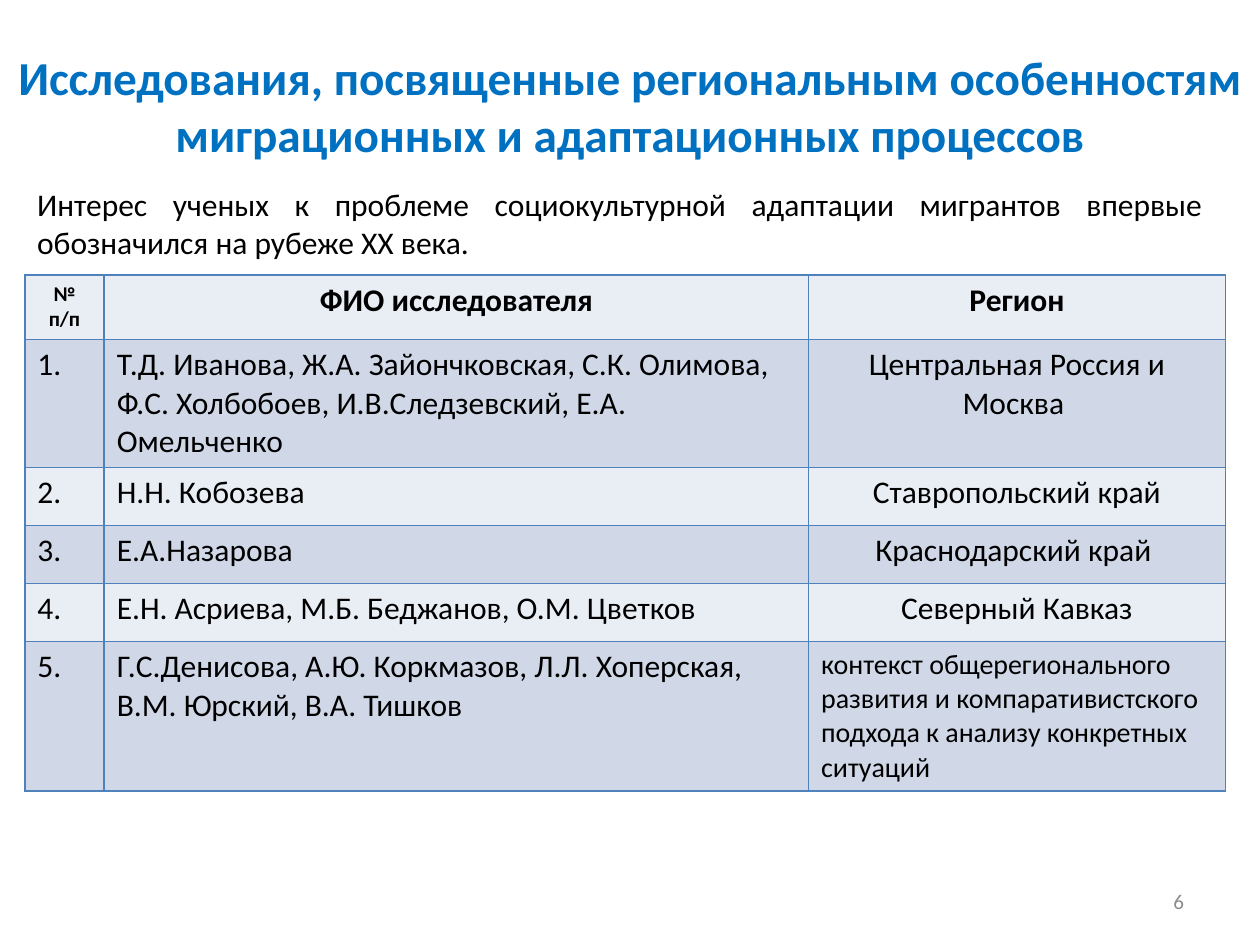
from dataclasses import dataclass

from lxml import etree
from pptx import Presentation
from pptx.dml.color import RGBColor
from pptx.enum import text
from pptx.oxml import ns
from pptx.util import Cm, Pt

BLUE = RGBColor(0x00, 0x70, 0xC0)
BORDER = RGBColor(0x4F, 0x81, 0xBD)
BLACK = RGBColor(0, 0, 0)
GREY = RGBColor(0x8C, 0x8C, 0x8C)
BANDS = (RGBColor(0xE9, 0xED, 0xF4), RGBColor(0xD0, 0xD8, 0xE8))
LEFT, CENTER = text.PP_ALIGN.LEFT, text.PP_ALIGN.CENTER
RIGHT, JUSTIFY = text.PP_ALIGN.RIGHT, text.PP_ALIGN.JUSTIFY
MIDDLE, TOP = text.MSO_ANCHOR.MIDDLE, text.MSO_ANCHOR.TOP


@dataclass
class Style:
    size: float = 18
    align: int = LEFT
    bold: bool = False
    color: RGBColor = BLACK


@dataclass
class Entry:
    """One table cell; each line of content is a paragraph."""
    content: str
    style: Style


@dataclass
class Row:
    height: float
    entries: tuple[Entry, ...]


PLAIN = Style()
REGION = Style(align=CENTER)
HEAD = Style(align=CENTER, bold=True)
COLUMNS = (1.6, 14.2, 8.4)


def research(number: int, height: float, names: str, region: str,
             style: Style = REGION) -> Row:
    return Row(height, (Entry(f"{number}.", PLAIN), Entry(names, PLAIN),
                        Entry(region, style)))


ROWS = (
    Row(1.3, (Entry("№\nп/п", Style(12, CENTER, True)),
              Entry("ФИО исследователя", HEAD), Entry("Регион", HEAD))),
    research(1, 2.58, "Т.Д. Иванова, Ж.А. Зайончковская, С.К. Олимова,\n"
             "Ф.С. Холбобоев, И.В.Следзевский, Е.А. Омельченко",
             "Центральная Россия и Москва "),
    research(2, 1.17, "Н.Н. Кобозева", "Ставропольский край"),
    research(3, 1.17, "Е.А.Назарова", "Краснодарский край "),
    research(4, 1.17, "Е.Н. Асриева, М.Б. Беджанов, О.М. Цветков", "Северный Кавказ"),
    research(5, 3.02, "Г.С.Денисова, А.Ю. Коркмазов, Л.Л. Хоперская, "
             "В.М. Юрский, В.А. Тишков",
             "контекст общерегионального\nразвития и компаративистского "
             "подхода к анализу конкретных ситуаций", Style(16)),
)


def write(tf, content: str, style: Style) -> None:
    tf.text = content
    tf.word_wrap = True
    font = {"name": "Calibri", "size": Pt(style.size), "bold": style.bold}
    for p in tf.paragraphs:
        p.alignment = style.align
        for r in p.runs:
            for name, value in font.items():
                setattr(r.font, name, value)
            r.font.color.rgb = style.color


def add_text(slide, box: tuple[float, ...], content: str, style: Style, anchor) -> None:
    tf = slide.shapes.add_textbox(*map(Cm, box)).text_frame
    write(tf, content, style)
    tf.vertical_anchor = anchor


def add_borders(cell) -> None:
    """Line all four sides; the lines must precede the fill in the XML."""
    pr = cell._tc.get_or_add_tcPr()
    for i, side in enumerate(("lnL", "lnR", "lnT", "lnB")):
        ln = etree.Element(ns.qn(f"a:{side}"), w=str(Pt(1)))
        fill = etree.SubElement(ln, ns.qn("a:solidFill"))
        etree.SubElement(fill, ns.qn("a:srgbClr"), val=str(BORDER))
        pr.insert(i, ln)


def add_research_table(slide) -> None:
    box = (0.5, 5.54, sum(COLUMNS), sum(row.height for row in ROWS))
    table = slide.shapes.add_table(len(ROWS), len(COLUMNS), *map(Cm, box)).table
    for column, width in zip(table.columns, COLUMNS):
        column.width = Cm(width)
    for i, row in enumerate(ROWS):
        table.rows[i].height = Cm(row.height)
        for j, entry in enumerate(row.entries):
            cell = table.cell(i, j)
            write(cell.text_frame, entry.content, entry.style)
            cell.fill.solid()
            cell.fill.fore_color.rgb = BANDS[i % 2]
            add_borders(cell)


def main() -> None:
    prs = Presentation()
    prs.slide_width, prs.slide_height = Cm(25.4), Cm(19.05)
    slide = prs.slides.add_slide(prs.slide_layouts[5])

    title = slide.shapes.title
    title.left, title.top, title.width, title.height = map(Cm, (0, 0.53, 25.4, 3.18))
    write(title.text_frame, "Исследования, посвященные региональным особенностям\v"
          "миграционных и адаптационных процессов", Style(27, CENTER, True, BLUE))
    title.text_frame.vertical_anchor = MIDDLE

    add_text(slide, (18.2, 17.65, 5.92, 1.02), "6", Style(12, RIGHT, color=GREY), MIDDLE)
    add_research_table(slide)
    add_text(slide, (0.5, 3.6, 24, 1.8),
             "Интерес ученых к проблеме социокультурной адаптации мигрантов "
             "впервые обозначился на рубеже XX века.", Style(align=JUSTIFY), TOP)
    prs.save("out.pptx")


if __name__ == "__main__":
    main()
